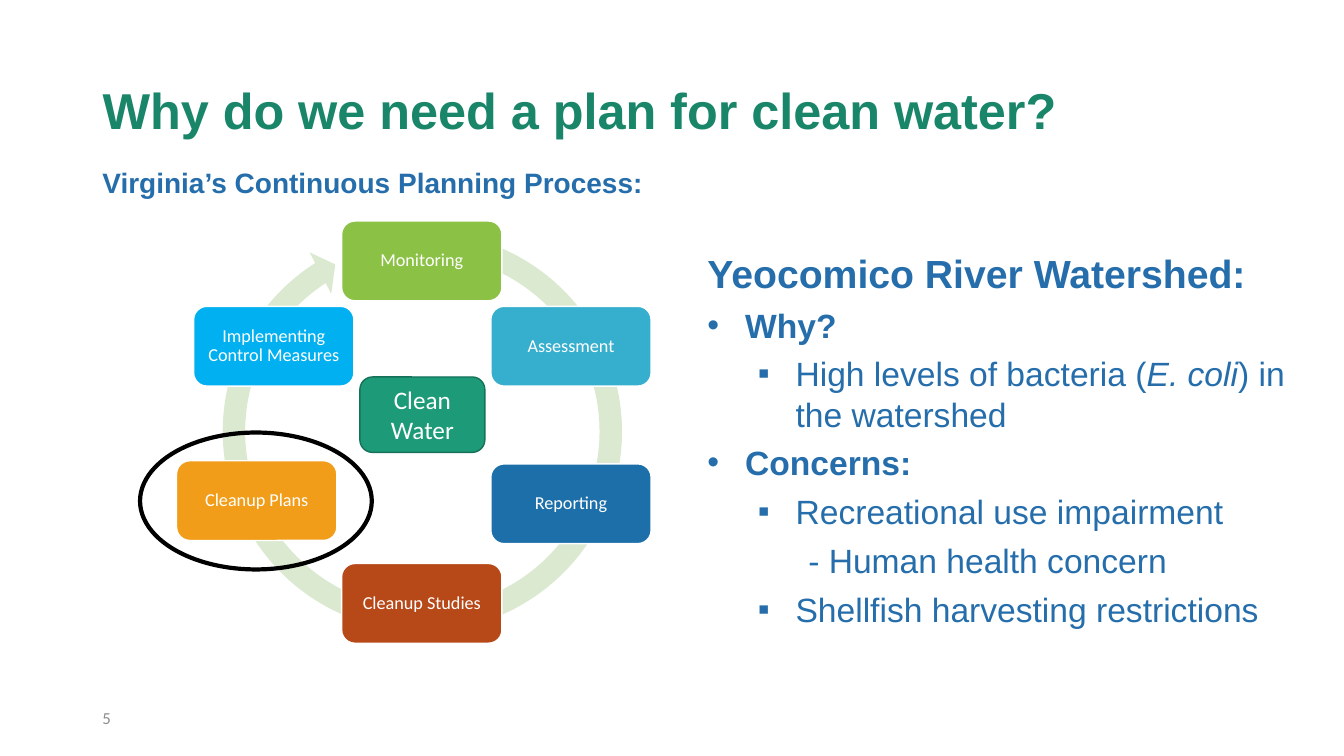
from lxml.etree import SubElement
from pptx import Presentation
from pptx.dml.color import RGBColor
from pptx.enum.shapes import MSO_SHAPE
from pptx.enum.text import MSO_ANCHOR, MSO_AUTO_SIZE, PP_ALIGN
from pptx.oxml.ns import qn
from pptx.util import Cm, Pt

WHITE = RGBColor(0xFF, 0xFF, 0xFF)
BLACK = RGBColor(0x00, 0x00, 0x00)
GREY = RGBColor(0x8C, 0x8C, 0x8C)
TITLE_GREEN = RGBColor(0x19, 0x85, 0x69)
TEXT_BLUE = RGBColor(0x25, 0x6E, 0xAB)
RING_GREEN = RGBColor(0xDA, 0xE9, 0xCF)
CENTRE_GREEN = RGBColor(0x1D, 0x9A, 0x78)
CENTRE_EDGE = RGBColor(0x15, 0x72, 0x59)

RING_ADJUSTMENTS = (0.053, 3.126, 142.356, 171.226, 0.055)
STEP_SIZE = (4.04, 2.01)
STEPS = [
    ("Monitoring", 3.3, 0.03, RGBColor(0x8B, 0xC1, 0x45)),
    ("Assessment", 7.06, 2.18, RGBColor(0x36, 0xAF, 0xCE)),
    ("Reporting", 7.06, 6.15, RGBColor(0x1D, 0x6F, 0xA9)),
    ("Cleanup Studies", 3.3, 8.66, RGBColor(0xB7, 0x49, 0x19)),
    ("Cleanup Plans", -0.86, 6.07, RGBColor(0xF1, 0x9D, 0x19)),
    ("Implementing Control Measures", -0.43, 2.18, RGBColor(0x00, 0xB0, 0xF0)),
]

WATERSHED_POINTS = [
    (0, "•", True, ["Why?"]),
    (1, "▪", False, ["High levels of bacteria (", "E. coli", ") in the watershed"]),
    (0, "•", True, ["Concerns:"]),
    (1, "▪", False, ["Recreational use impairment"]),
    (2, None, False, ["- Human health concern"]),
    (1, "▪", False, ["Shellfish harvesting restrictions"]),
]
INDENTS = [(0.95, -0.95), (2.22, -0.95), (2.54, 0)]


def set_font(para, name, size, colour, bold=False):
    """Format a whole paragraph."""
    para.font.name = name
    para.font.size = Pt(size)
    para.font.bold = bold
    para.font.color.rgb = colour


def set_indent(para, level, bullet):
    """Give a paragraph its level, hanging indent and bullet."""
    para.level = level
    properties = para._p.get_or_add_pPr()
    margin, hanging = INDENTS[level]
    properties.set("marL", str(Cm(margin)))
    properties.set("indent", str(Cm(hanging)))
    if bullet:
        SubElement(properties, qn("a:buFont")).set("typeface", "Arial")
        SubElement(properties, qn("a:buChar")).set("char", bullet)


def add_box(page, left, top, width, height):
    """Add a wrapping text box and return it."""
    box = page.shapes.add_textbox(Cm(left), Cm(top), Cm(width), Cm(height))
    box.text_frame.word_wrap = True
    return box


def add_figure(page, kind, left, top, width, height, fill=None, line=None, weight=1):
    """Add a flat preset shape and return it."""
    figure = page.shapes.add_shape(kind, Cm(left), Cm(top), Cm(width), Cm(height))
    figure.shadow.inherit = False
    if fill is None:
        figure.fill.background()
    else:
        figure.fill.solid()
        figure.fill.fore_color.rgb = fill
    if line is None:
        figure.line.fill.background()
    else:
        figure.line.color.rgb = line
        figure.line.width = Pt(weight)
    return figure


def label_figure(figure, text, size, inset):
    """Write a centred white label with equal side insets."""
    frame = figure.text_frame
    frame.word_wrap = True
    frame.vertical_anchor = MSO_ANCHOR.MIDDLE
    frame.margin_left = frame.margin_right = Cm(inset)
    para = frame.paragraphs[0]
    para.text = text
    para.alignment = PP_ALIGN.CENTER
    set_font(para, "Calibri", size, WHITE)
    return para


def build_title(page, left, top, width, height):
    """Place and format the title placeholder."""
    title = page.shapes.title
    title.left, title.top, title.width, title.height = map(Cm, (left, top, width, height))
    frame = title.text_frame
    frame.auto_size = MSO_AUTO_SIZE.NONE
    frame.vertical_anchor = MSO_ANCHOR.MIDDLE
    para = frame.paragraphs[0]
    para.text = "Why do we need a plan for clean water?"
    para.alignment = PP_ALIGN.LEFT
    para.line_spacing = 0.9
    set_font(para, "Arial", 36, TITLE_GREEN, True)


def build_subtitle(page, left, top, width, height):
    """Write the heading of the planning cycle."""
    para = add_box(page, left, top, width, height).text_frame.paragraphs[0]
    para.text = "Virginia’s Continuous Planning Process:"
    set_font(para, "Arial", 20, TEXT_BLUE, True)


def build_cycle(page, left, top, size):
    """Draw the planning cycle in a square box around its ring."""
    ring = add_figure(page, MSO_SHAPE.CIRCULAR_ARROW, left, top, size, size, RING_GREEN)
    for index, value in enumerate(RING_ADJUSTMENTS):
        ring.adjustments[index] = value
    for name, across, down, colour in STEPS:
        step = add_figure(page, MSO_SHAPE.ROUNDED_RECTANGLE, left + across, top + down,
                          *STEP_SIZE, colour, WHITE)
        label_figure(step, name, 13, 0.23).line_spacing = 0.9
    add_figure(page, MSO_SHAPE.OVAL, left - 1.78, top + 5.36, 5.84, 3.45,
               line=BLACK, weight=3)
    centre = add_figure(page, MSO_SHAPE.ROUNDED_RECTANGLE, left + 3.76, top + 3.96,
                        3.15, 1.9, CENTRE_GREEN, CENTRE_EDGE)
    label_figure(centre, "Clean Water", 18, 0.25)


def build_watershed(page, left, top, width, height):
    """Write the watershed heading and its bulleted points."""
    frame = add_box(page, left, top, width, height).text_frame
    heading = frame.paragraphs[0]
    heading.text = "Yeocomico River Watershed:"
    heading.space_after = Pt(6)
    set_font(heading, "Arial", 28, TEXT_BLUE, True)
    for level, bullet, bold, texts in WATERSHED_POINTS:
        para = frame.add_paragraph()
        para.space_after = Pt(6)
        set_indent(para, level, bullet)
        set_font(para, "Arial", 24, TEXT_BLUE, bold)
        for text in texts:
            span = para.add_run()
            span.text = text
            if text == "E. coli":
                span.font.italic = True


def build_page_number(page, left, top, width, height):
    """Write the page number at the foot."""
    frame = add_box(page, left, top, width, height).text_frame
    frame.vertical_anchor = MSO_ANCHOR.MIDDLE
    para = frame.paragraphs[0]
    para.text = "5"
    set_font(para, "Calibri", 12, GREY)


def main():
    """Build the slide and save the deck."""
    deck = Presentation()
    deck.slide_width, deck.slide_height = Cm(33.87), Cm(19.05)
    page = deck.slides.add_slide(deck.slide_layouts[5])
    build_title(page, 2.33, 1.01, 29.21, 3.68)
    build_subtitle(page, 2.33, 4.04, 18.54, 1.12)
    build_cycle(page, 5.31, 5.54, 10.67)
    build_watershed(page, 17.58, 6.15, 15.19, 9.91)
    build_page_number(page, 2.33, 17.53, 29.21, 1.14)
    deck.save("out.pptx")


if __name__ == "__main__":
    main()
